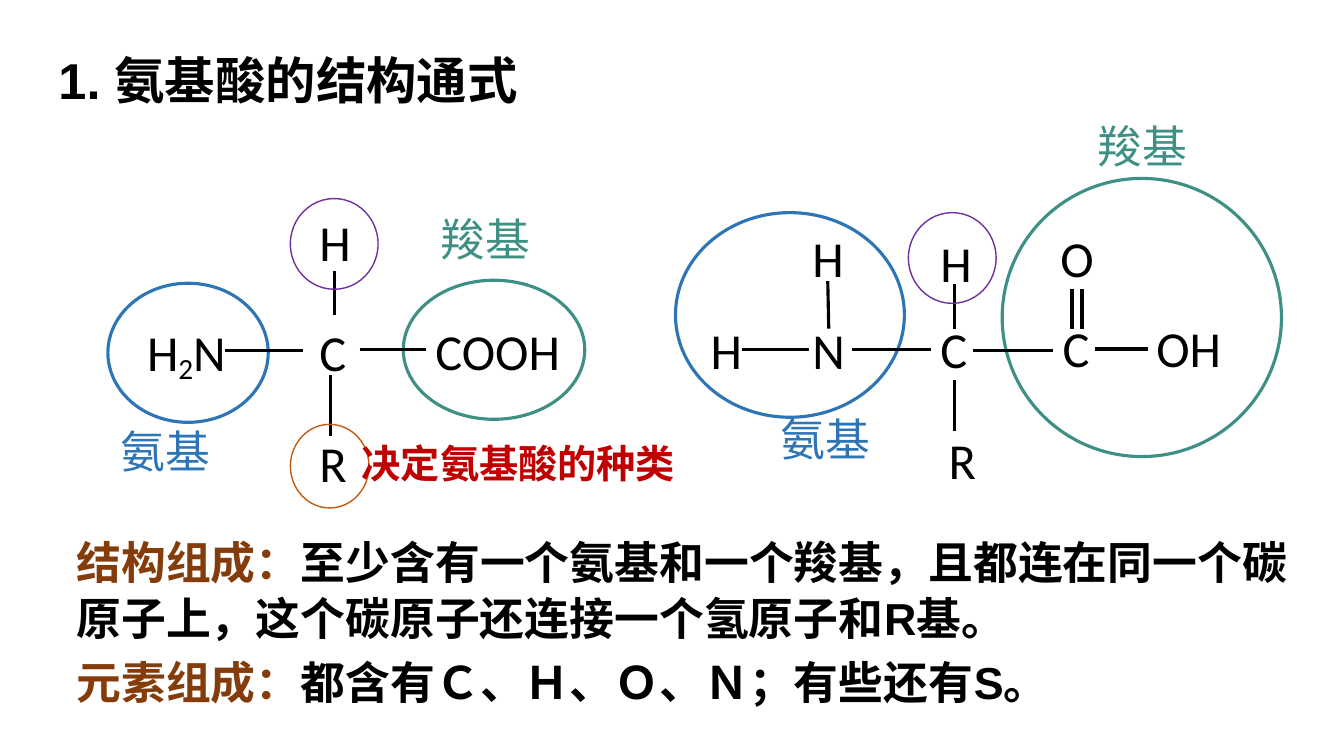
from dataclasses import dataclass

from lxml.etree import SubElement
from pptx import Presentation
from pptx.dml.color import RGBColor
from pptx.enum.shapes import MSO_CONNECTOR as CONNECTOR, MSO_SHAPE as SHAPE
from pptx.enum.text import MSO_ANCHOR as ANCHOR, PP_ALIGN as ALIGN
from pptx.oxml.ns import qn
from pptx.util import Pt

PX = 9144  # 100 px to the inch
TITLE_ONLY = 5


@dataclass(frozen=True)
class Theme:
    black: str = "000000"
    white: str = "FFFFFF"
    amino: str = "2E75B6"
    carboxyl: str = "3E8F84"
    hydrogen: str = "7030A0"
    residue: str = "C55A11"
    warning: str = "C00000"
    term: str = "843C0B"
    atom_font: str = "Calibri"
    latin_font: str = "Arial"
    chinese_font: str = "Noto Sans CJK SC"
    label_font: str = "Noto Sans CJK JP"
    title_size: int = 36
    atom_size: int = 36
    body_size: int = 32
    note_size: int = 28


class Page:
    def __init__(self, deck, theme):
        self.slide = deck.slides.add_slide(deck.slide_layouts[TITLE_ONLY])
        self.theme = theme

    def style(self, font, size, color, latin, chinese=None, bold=False):
        font.size, font.bold, font.name = Pt(size), bold, latin
        font.color.rgb = RGBColor.from_string(color)
        if chinese:
            SubElement(font._rPr, qn("a:ea")).set("typeface", chinese)

    def title(self, text, left, top, width, height):
        box = self.slide.shapes.title
        box.left, box.top, box.width, box.height = (
            n * PX for n in (left, top, width, height))
        frame = box.text_frame
        frame.text = text
        frame.vertical_anchor = ANCHOR.MIDDLE
        para = frame.paragraphs[0]
        para.alignment, para.line_spacing = ALIGN.LEFT, 0.9
        self.style(para.font, self.theme.title_size, self.theme.black,
                   self.theme.latin_font, self.theme.chinese_font, True)

    def frame(self, left, top, width, height):
        box = self.slide.shapes.add_textbox(
            left * PX, top * PX, width * PX, height * PX)
        box.text_frame.word_wrap = True
        return box.text_frame

    def text(self, text, left, top, width, height, *style):
        para = self.frame(left, top, width, height).paragraphs[0]
        self.style(para.font, *style)
        return para, para.add_run(), text

    def line_of_text(self, text, left, top, width, height, *style):
        """Add one paragraph; a part after "_" is one subscript character."""
        para = self.frame(left, top, width, height).paragraphs[0]
        self.style(para.font, *style)
        head, mark, tail = text.partition("_")
        para.add_run().text = head
        if mark:
            span = para.add_run()
            span.text = tail[0]
            span.font._rPr.set("baseline", "-16000")
            para.add_run().text = tail[1:]

    def atom(self, text, left, top, width=70):
        self.line_of_text(text, left, top, width, 71, self.theme.atom_size,
                          self.theme.black, self.theme.atom_font)

    def label(self, text, left, top, color):
        self.line_of_text(text, left, top, 137, 64, self.theme.body_size,
                          color, self.theme.label_font, self.theme.label_font)

    def note(self, text, left, top, width, height):
        self.line_of_text(text, left, top, width, height,
                          self.theme.note_size, self.theme.warning,
                          self.theme.chinese_font, self.theme.chinese_font,
                          True)

    def circle(self, left, top, width, height, color, weight, fill=None):
        ring = self.slide.shapes.add_shape(
            SHAPE.OVAL, left * PX, top * PX, width * PX, height * PX)
        ring.shadow.inherit = False
        ring.line.color.rgb = RGBColor.from_string(color)
        ring.line.width = Pt(weight)
        if fill:
            ring.fill.solid()
            ring.fill.fore_color.rgb = RGBColor.from_string(fill)
        else:
            ring.fill.background()

    def bond(self, x1, y1, x2, y2, weight=2.25):
        line = self.slide.shapes.add_connector(
            CONNECTOR.STRAIGHT, x1 * PX, y1 * PX, x2 * PX, y2 * PX)
        line.line.color.rgb = RGBColor.from_string(self.theme.black)
        line.line.width = Pt(weight)
        SubElement(line._element.spPr, qn("a:effectLst"))

    def summary(self, entries, left, top, width, height):
        """Add one paragraph for each term and its explanation."""
        frame = self.frame(left, top, width, height)
        for index, (term, meaning) in enumerate(entries):
            para = frame.add_paragraph() if index else frame.paragraphs[0]
            para.line_spacing = Pt(40)
            para.space_before = Pt(6 if index else 0)
            for text, color in ((term, self.theme.term),
                                (meaning, self.theme.black)):
                span = para.add_run()
                span.text = text
                self.style(span.font, self.theme.body_size, color,
                           self.theme.latin_font, self.theme.chinese_font,
                           True)


def main():
    deck = Presentation()
    deck.slide_width, deck.slide_height = 1333 * PX, 750 * PX
    theme = Theme()
    page = Page(deck, theme)
    page.title("1. 氨基酸的结构通式", 48, 39, 1116, 87)

    for *place, color in (
        (107, 281, 159, 138, theme.amino),
        (400, 278, 180, 138, theme.carboxyl),
        (670, 211, 227, 203, theme.amino),
        (994, 177, 277, 276, theme.carboxyl),
    ):
        page.circle(*place, color, 2.25, theme.white)

    for label in (
        ("氨基", 110, 415, theme.amino),
        ("羧基", 427, 205, theme.carboxyl),
        ("氨基", 764, 404, theme.amino),
        ("羧基", 1079, 113, theme.carboxyl),
    ):
        page.label(*label)

    short_formula = (("H_2N", 136, 314, 115), ("C", 307, 314),
                     ("H", 307, 204), ("R", 307, 424),
                     ("COOH", 422, 313, 165))
    full_formula = (("H", 695, 312), ("N", 796, 312), ("H", 796, 220),
                    ("C", 923, 311), ("H", 923, 225), ("R", 931, 421),
                    ("C", 1044, 310), ("O", 1042, 220),
                    ("OH", 1137, 310, 89))
    for atom in short_formula + full_formula:
        page.atom(*atom)

    short_bonds = ((332, 269, 332, 313), (328, 372, 328, 433),
                   (223, 348, 301, 348), (357, 347, 423, 347))
    full_bonds = ((736, 347, 802, 347), (821, 279, 822, 326),
                  (845, 347, 923, 347), (947, 282, 947, 326),
                  (947, 377, 947, 428), (965, 348, 1044, 348),
                  (1086, 346, 1139, 346, 3), (1063, 287, 1063, 326, 3),
                  (1073, 287, 1073, 326, 3))
    for bond in short_bonds + full_bonds:
        page.bond(*bond)

    page.circle(288, 421, 78, 83, theme.residue, 1)
    for left, top in ((288, 197), (901, 211)):
        page.circle(left, top, 87, 90, theme.hydrogen, 1)
    page.note("决定氨基酸的种类", 349, 431, 346, 57)

    page.summary((
        ("结构组成：", "至少含有一个氨基和一个羧基，且都连在同一个碳原子上，"
                  "这个碳原子还连接一个氢原子和R基。"),
        ("元素组成：", "都含有Ｃ、Ｈ、Ｏ、Ｎ；有些还有S。"),
    ), 66, 523, 1235, 187)
    deck.save("out.pptx")


if __name__ == "__main__":
    main()
